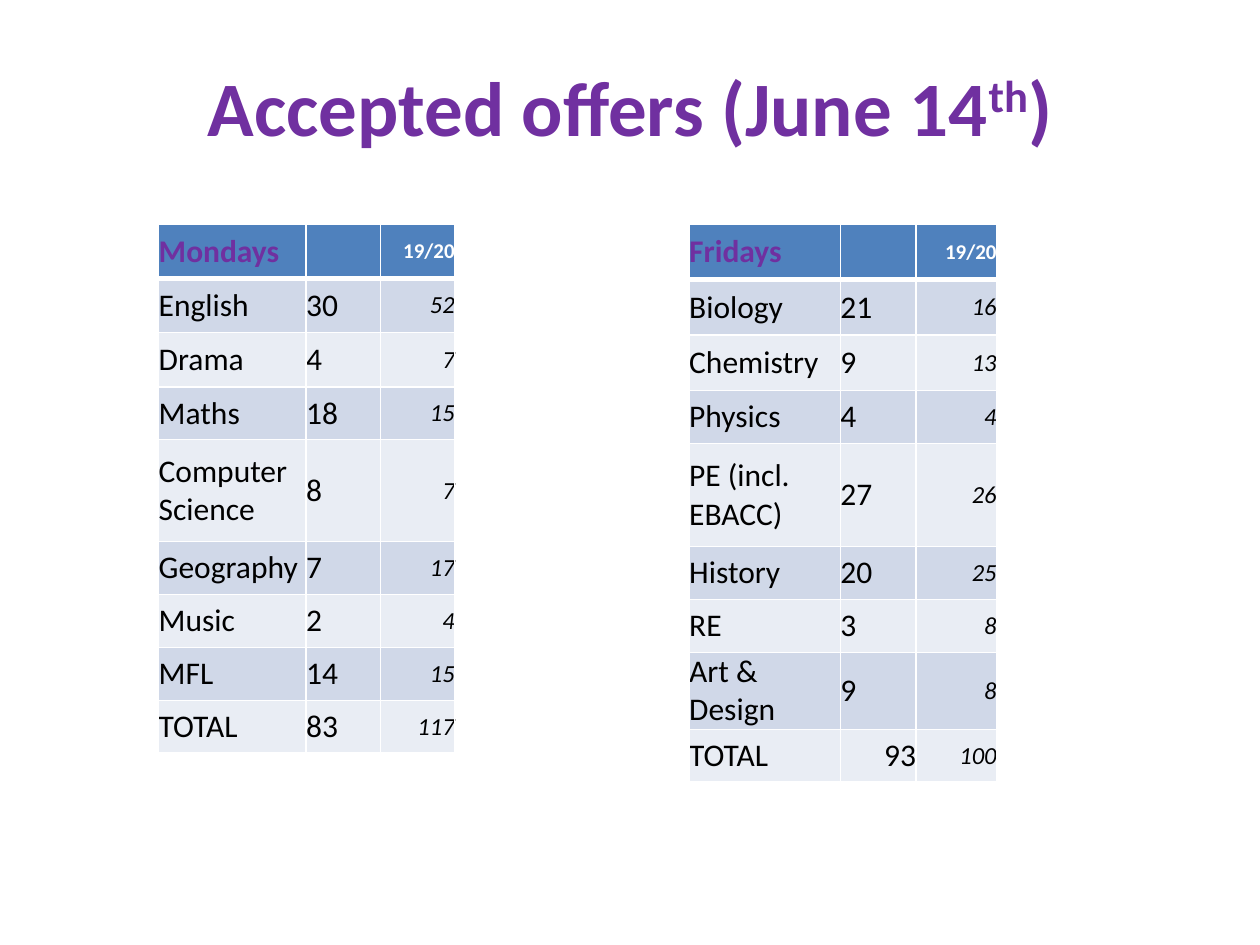
import pptx
import pptx.dml.color
import pptx.enum.text
import pptx.oxml
import pptx.oxml.ns
import pptx.util

RGBColor = pptx.dml.color.RGBColor
Inches = pptx.util.Inches
Pt = pptx.util.Pt
ALIGN = pptx.enum.text.PP_ALIGN
MIDDLE = pptx.enum.text.MSO_ANCHOR.MIDDLE

PURPLE = RGBColor(0x70, 0x30, 0xA0)
BLACK = RGBColor(0, 0, 0)
WHITE = RGBColor(0xFF, 0xFF, 0xFF)
HEADER_BLUE = RGBColor(0x4F, 0x81, 0xBD)
BANDS = [RGBColor(0xD0, 0xD8, 0xE8), RGBColor(0xE9, 0xED, 0xF4)]
FONT = "Calibri"

MONDAYS = [
    ("Mondays", "", "19/20"),
    ("English", "30", "52"),
    ("Drama", "4", "7"),
    ("Maths", "18", "15"),
    ("Computer Science", "8", "7"),
    ("Geography", "7", "17"),
    ("Music", "2", "4"),
    ("MFL", "14", "15"),
    ("TOTAL", "83", "117"),
]
FRIDAYS = [
    ("Fridays", "", "19/20"),
    ("Biology", "21", "16"),
    ("Chemistry", "9", "13"),
    ("Physics", "4", "4"),
    ("PE (incl. EBACC)", "27", "26"),
    ("History", "20", "25"),
    ("RE", "3", "8"),
    ("Art & Design", "9", "8"),
    ("TOTAL", "93", "100"),
]


def add_heading(slide, left, top, width, height):
    heading = slide.shapes.title
    heading.left, heading.top = Inches(left), Inches(top)
    heading.width, heading.height = Inches(width), Inches(height)
    heading.text_frame.vertical_anchor = MIDDLE
    paragraph = heading.text_frame.paragraphs[0]
    paragraph.alignment = ALIGN.CENTER
    for words, baseline in [("Accepted offers (June 14", 0), ("th", 30000), (")", 0)]:
        run = paragraph.add_run()
        run.text = words
        style_font(run.font, 44, PURPLE, bold=True)
        if baseline:
            run._r.get_or_add_rPr().set("baseline", str(baseline))


def style_font(font, size, color, bold=False, italic=False):
    font.name, font.size = FONT, Pt(size)
    font.bold, font.italic = bold, italic
    font.color.rgb = color


def set_borders(cell, bottom_width):
    properties = cell._tc.get_or_add_tcPr()
    widths = {"lnL": 1, "lnR": 1, "lnT": 1, "lnB": bottom_width}
    for position, (side, width) in enumerate(widths.items()):
        border = pptx.oxml.parse_xml(
            f'<a:{side} {pptx.oxml.ns.nsdecls("a")} w="{Pt(width)}">'
            f'<a:solidFill><a:srgbClr val="{WHITE}"/></a:solidFill></a:{side}>'
        )
        properties.insert(position, border)


def fill_cell(cell, words, row, column):
    header = row == 0
    last_year = column == 2
    cell.margin_left = cell.margin_right = cell.margin_top = cell.margin_bottom = 0
    cell.vertical_anchor = MIDDLE
    cell.fill.solid()
    cell.fill.fore_color.rgb = HEADER_BLUE if header else BANDS[(row - 1) % 2]
    set_borders(cell, 3 if header else 1)
    cell.text_frame.text = words
    paragraph = cell.text_frame.paragraphs[0]
    paragraph.alignment = ALIGN.RIGHT if last_year else ALIGN.LEFT
    if header:
        size, color = (12, WHITE) if last_year else (18, PURPLE)
    else:
        size, color = 14 if last_year else 18, BLACK
    style_font(paragraph.font, size, color, header, last_year and not header)
    for run in paragraph.runs:
        style_font(run.font, size, color, header, last_year and not header)


def add_offers(slide, offers, left, top, column_widths, row_heights):
    table = slide.shapes.add_table(
        len(offers), len(column_widths), Inches(left), Inches(top),
        Inches(sum(column_widths)), Inches(sum(row_heights)),
    ).table
    for column, width in zip(table.columns, column_widths):
        column.width = Inches(width)
    for row, height in zip(table.rows, row_heights):
        row.height = Inches(height)
    for row, entries in enumerate(offers):
        for column, words in enumerate(entries):
            fill_cell(table.cell(row, column), words, row, column)
    return table


def main():
    deck = pptx.Presentation()
    deck.slide_width, deck.slide_height = Inches(10), Inches(7.5)
    slide = deck.slides.add_slide(deck.slide_layouts[5])
    add_heading(slide, 0.75, 0.25, 8.5, 1.17)
    add_offers(slide, MONDAYS, 1.26, 1.78, [1.17, 0.59, 0.59],
               [0.43] * 3 + [0.42, 0.81] + [0.42] * 4)
    fridays = add_offers(slide, FRIDAYS, 5.47, 1.78, [1.2, 0.6, 0.64],
                         [0.44] * 3 + [0.42, 0.82] + [0.42] * 4)
    fridays.cell(len(FRIDAYS) - 1, 1).text_frame.paragraphs[0].alignment = ALIGN.RIGHT
    deck.save("out.pptx")


if __name__ == "__main__":
    main()
